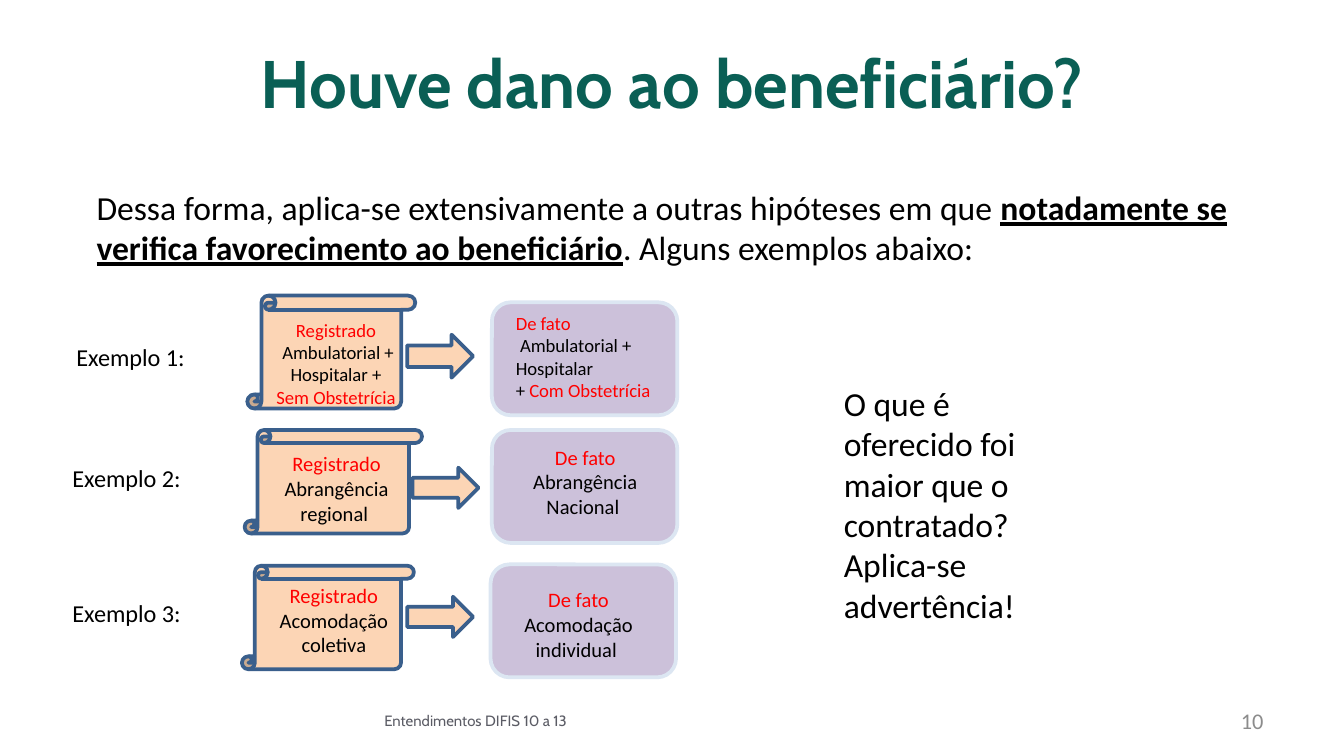
from pptx import Presentation
from pptx import util as u
from pptx.dml.color import RGBColor
from pptx.enum import shapes, text

PX = 9144  # EMU in one px, 100 px to the inch
WIDTH = 1000
GREEN = RGBColor(0x0A, 0x5F, 0x55)
BLACK = RGBColor(0, 0, 0)
RED = RGBColor(0xFF, 0, 0)
GREY = RGBColor(0x8C, 0x8C, 0x8C)
SLATE = RGBColor(0x5B, 0x5C, 0x65)
PEACH = RGBColor(0xFC, 0xD5, 0xB5)
BLUE = RGBColor(0x3A, 0x5F, 0x8C)
LILAC = RGBColor(0xCC, 0xC1, 0xDA)
PALE = RGBColor(0xDC, 0xE6, 0xF2)

LEFT, CENTER, RIGHT = text.PP_ALIGN.LEFT, text.PP_ALIGN.CENTER, text.PP_ALIGN.RIGHT
KIND = shapes.MSO_SHAPE


class Board:
    """Holds the style and the current slide."""

    body_font, head_font = "Calibri", "Cabin"

    def __init__(self, deck):
        self.page = deck.slides.add_slide(deck.slide_layouts[5])

    def place(self, at):
        return [u.Emu(value * PX) for value in at]

    def style(self, span, size, color, font=None, strong=False):
        span.font.name = font or self.body_font
        span.font.size = u.Pt(size)
        span.font.color.rgb = color
        span.font.bold = strong

    def title(self, at, wording):
        box = self.page.shapes.title
        box.left, box.top, box.width, box.height = self.place(at)
        frame = box.text_frame
        frame.text = wording
        frame.auto_size = text.MSO_AUTO_SIZE.NONE
        frame.vertical_anchor = text.MSO_ANCHOR.MIDDLE
        frame.paragraphs[0].alignment = CENTER
        self.style(frame.paragraphs[0].runs[0], 36, GREEN, self.head_font, True)

    def paragraphs(self, at, lines, size, align=LEFT):
        """Each line is a list of (wording, color, emphasis) parts."""
        box = self.page.shapes.add_textbox(*self.place(at))
        frame = box.text_frame
        frame.word_wrap = True
        frame.auto_size = text.MSO_AUTO_SIZE.SHAPE_TO_FIT_TEXT
        for index, parts in enumerate(lines):
            para = frame.add_paragraph() if index else frame.paragraphs[0]
            para.alignment = align
            for wording, color, strong in parts:
                span = para.add_run()
                span.text = wording
                self.style(span, size, color, strong=strong)
                span.font.underline = strong

    def footer(self, at, wording, size, color, font, align):
        frame = self.page.shapes.add_textbox(*self.place(at)).text_frame
        frame.word_wrap = True
        frame.vertical_anchor = text.MSO_ANCHOR.MIDDLE
        frame.text = wording
        frame.paragraphs[0].alignment = align
        self.style(frame.paragraphs[0].runs[0], size, color, font)

    def shape(self, kind, at, fill, line):
        shape = self.page.shapes.add_shape(kind, *self.place(at))
        shape.shadow.inherit = False
        shape.fill.solid()
        shape.fill.fore_color.rgb = fill
        shape.line.color.rgb = line
        shape.line.width = u.Pt(2)


def plain(wording, color=BLACK):
    return (wording, color, False)


def pair(heading, wording):
    return [[plain(heading, RED)], [plain(wording)]]


# Each example: label, scroll, scroll text, arrow, card, card text, size, card alignment
EXAMPLES = [
    ((47, 250, 135, 32), (184, 220, 125, 84),
     (195, 232, 110, 77), [[plain("Registrado", RED)],
                           [plain(" Ambulatorial + Hospitalar + "),
                            plain("Sem Obstetrícia", RED)]],
     (303, 249, 49, 32), (366, 225, 138, 84),
     (374, 227, 123, 77), [[plain("De fato", RED)],
                           [plain(" Ambulatorial + Hospitalar")],
                           [plain("+ "), plain("Com Obstetrícia", RED)]],
     10, LEFT),
    ((44, 340, 135, 32), (182, 320, 132, 77),
     (184, 331, 133, 66), pair("Registrado", "Abrangência regional "),
     (307, 348, 49, 30), (366, 320, 138, 84),
     (369, 326, 133, 66), pair("De fato", "Abrangência Nacional "),
     11, CENTER),
    ((44, 440, 135, 32), (180, 421, 128, 77),
     (182, 429, 133, 66), pair("Registrado", "Acomodação coletiva"),
     (303, 444, 49, 30), (365, 420, 138, 84),
     (364, 432, 133, 66), pair("De fato", "Acomodação individual "),
     11, CENTER),
]


def main():
    deck = Presentation()
    deck.slide_width = u.Emu(WIDTH * PX)
    deck.slide_height = u.Emu(WIDTH * PX * 9 // 16)
    board = Board(deck)

    # Title and introduction
    board.title((50, 14, 900, 94), "Houve dano ao beneficiário?")
    board.paragraphs((62, 134, 883, 71), [[
        plain("Dessa forma, aplica-se extensivamente a outras hipóteses em que "),
        ("notadamente se verifica favorecimento ao beneficiário", BLACK, True),
        plain(". Alguns exemplos abaixo:")]], 18)

    # Examples: registered product, arrow, actual product
    for number, example in enumerate(EXAMPLES, 1):
        (label, scroll, scroll_text, registered,
         arrow, card, card_text, actual, size, align) = example
        board.paragraphs(label, [[plain(f"Exemplo {number}:")]], 13)
        board.shape(KIND.VERTICAL_SCROLL, scroll, PEACH, BLUE)
        board.shape(KIND.RIGHT_ARROW, arrow, PEACH, BLUE)
        board.paragraphs(scroll_text, registered, size, CENTER)
        board.shape(KIND.FLOWCHART_ALTERNATE_PROCESS, card, LILAC, PALE)
        board.paragraphs(card_text, actual, size, align)

    # Conclusion
    board.paragraphs((618, 280, 198, 192), [[plain(
        "O que é oferecido foi maior que o contratado? Aplica-se advertência!")]], 18)

    # Footer and page number
    board.footer((50, 521, 608, 30), "Entendimentos DIFIS 10 a 13", 8, SLATE,
                 board.head_font, CENTER)
    board.footer((717, 521, 233, 30), "10", 12, GREY, board.body_font, RIGHT)

    deck.save("out.pptx")


if __name__ == "__main__":
    main()
